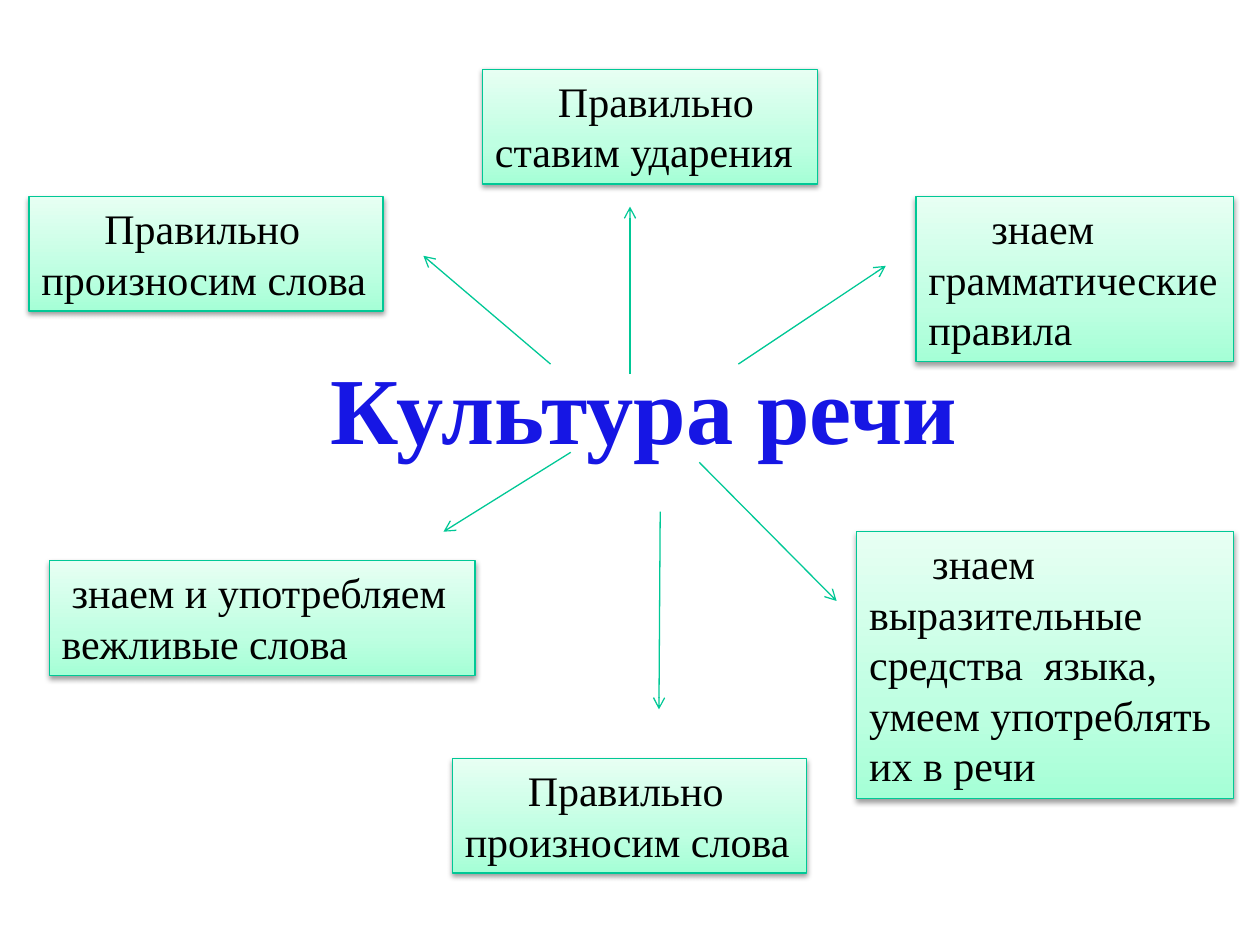
from lxml import etree
from pptx import Presentation
from pptx.dml.color import RGBColor
from pptx.enum.shapes import MSO_CONNECTOR, MSO_SHAPE
from pptx.enum.text import MSO_ANCHOR, PP_ALIGN
from pptx.oxml import parse_xml
from pptx.oxml.ns import nsdecls, qn
from pptx.util import Inches, Pt

RECTANGLE = MSO_SHAPE.RECTANGLE
STRAIGHT = MSO_CONNECTOR.STRAIGHT
LEFT, CENTER = PP_ALIGN.LEFT, PP_ALIGN.CENTER
TOP = MSO_ANCHOR.TOP

FONT = "Times New Roman"
BLACK = RGBColor(0x00, 0x00, 0x00)
GREEN = RGBColor(0x00, 0xC8, 0x96)
BLUE = RGBColor(0x16, 0x16, 0xE4)
BLUE_STOPS = [(0, RGBColor(0x79, 0x79, 0xFF)), (75, BLUE),
              (100, RGBColor(0x00, 0x00, 0xBD))]
MINT_STOPS = [(0, RGBColor(0xA5, 0xFF, 0xD6)), (35, RGBColor(0xBF, 0xFF, 0xE2)),
              (100, RGBColor(0xE7, 0xFF, 0xF3))]

# left, top, width, height, first-line indent, lines
CARDS = [
    (0.23, 1.56, 2.81, 0.91, 0.5, ["Правильно", "произносим слова"]),
    (3.83, 0.55, 2.66, 0.91, 0.5, ["Правильно", "ставим ударения"]),
    (6.8, 4.22, 2.99, 2.12, 0.5, ["знаем", "выразительные", "средства  языка,",
                                  "умеем употреблять", "их в речи"]),
    (7.27, 1.56, 2.52, 1.31, 0.5, ["знаем", "грамматические", "правила"]),
    (0.39, 4.45, 3.38, 0.91, 0.08, ["знаем и употребляем", "вежливые слова"]),
    (3.59, 6.02, 2.81, 0.91, 0.5, ["Правильно", "произносим слова"]),
]
# start x, start y, end x, end y
ARROWS = [
    (5, 2.97, 5, 1.64),
    (5.86, 2.89, 7.03, 2.11),
    (4.37, 2.89, 3.36, 2.03),
    (4.53, 3.59, 3.52, 4.22),
    (5.55, 3.67, 6.64, 4.77),
    (5.24, 4.06, 5.23, 5.63),
]


def gradient_fill(stops, angle):
    """Return a linear a:gradFill; the angle runs clockwise in degrees."""
    stop_xml = "".join(
        f'<a:gs pos="{position * 1000}"><a:srgbClr val="{color}"/></a:gs>'
        for position, color in stops)
    return parse_xml(
        f'<a:gradFill {nsdecls("a")}><a:gsLst>{stop_xml}</a:gsLst>'
        f'<a:lin ang="{angle * 60000}" scaled="0"/></a:gradFill>')


def write_text(paragraph, text, size=24, bold=False, color=BLACK,
               stops=None, align=LEFT, indent=0):
    if indent:
        properties = paragraph._p.get_or_add_pPr()
        properties.set("marL", "0")
        properties.set("indent", str(Inches(indent)))
    paragraph.alignment = align
    run = paragraph.add_run()
    run.text = text
    run.font.name = FONT
    run.font.size = Pt(size)
    run.font.bold = bold
    if stops:
        run._r.get_or_add_rPr().insert(0, gradient_fill(stops, 90))
    else:
        run.font.color.rgb = color


class MapSlide:
    def __init__(self, presentation):
        self.slide = presentation.slides.add_slide(presentation.slide_layouts[6])
        self.line_color = GREEN
        self.line_width = Pt(0.75)

    def style_line(self, line):
        line.color.rgb = self.line_color
        line.width = self.line_width

    def title(self, text, left, top, width, height):
        box = self.slide.shapes.add_textbox(
            Inches(left), Inches(top), Inches(width), Inches(height))
        box.text_frame.word_wrap = False
        write_text(box.text_frame.paragraphs[0], text, size=54, bold=True,
                   stops=BLUE_STOPS, align=CENTER)

    def card(self, left, top, width, height, indent, lines):
        shape = self.slide.shapes.add_shape(
            RECTANGLE, Inches(left), Inches(top), Inches(width), Inches(height))
        properties = shape._element.spPr
        properties.find(qn("a:prstGeom")).addnext(gradient_fill(MINT_STOPS, 270))
        self.style_line(shape.line)
        self.add_shadow(shape)

        frame = shape.text_frame
        frame.word_wrap = True
        frame.margin_right = 0
        frame.vertical_anchor = TOP
        for index, text in enumerate(lines):
            paragraph = frame.add_paragraph() if index else frame.paragraphs[0]
            write_text(paragraph, text, indent=0 if index else indent)

    def add_shadow(self, shape):
        shape.shadow.inherit = False
        effects = shape._element.spPr.find(qn("a:effectLst"))
        effects.append(parse_xml(
            f'<a:outerShdw {nsdecls("a")} blurRad="{Pt(3.1)}" dist="{Pt(1.6)}" '
            'dir="5400000" rotWithShape="0"><a:srgbClr val="000000">'
            '<a:alpha val="38000"/></a:srgbClr></a:outerShdw>'))

    def arrow(self, *ends):
        connector = self.slide.shapes.add_connector(
            STRAIGHT, *(Inches(value) for value in ends))
        self.style_line(connector.line)
        line = connector.line._get_or_add_ln()
        etree.SubElement(line, qn("a:tailEnd"), type="arrow")
        etree.SubElement(connector._element.spPr, qn("a:effectLst"))


def main():
    presentation = Presentation()
    presentation.slide_width = Inches(10)
    presentation.slide_height = Inches(7.5)
    map_slide = MapSlide(presentation)
    map_slide.title("Культура речи", 2.5, 2.73, 5.22, 1.01)
    for card in CARDS:
        map_slide.card(*card)
    for ends in ARROWS:
        map_slide.arrow(*ends)
    presentation.save("out.pptx")


if __name__ == "__main__":
    main()
